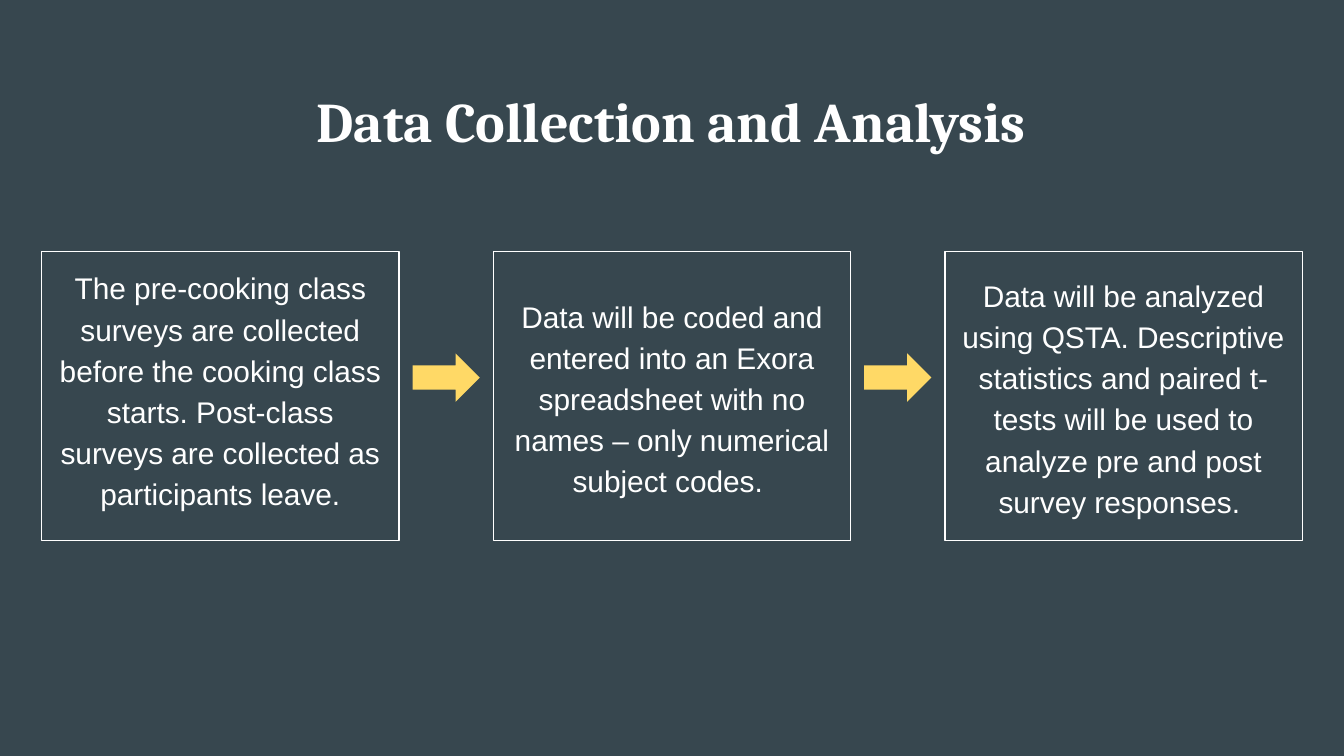
from lxml.etree import SubElement
from pptx import Presentation
from pptx.dml.color import RGBColor
from pptx.enum.shapes import MSO_SHAPE
from pptx.enum.text import MSO_ANCHOR, MSO_AUTO_SIZE, PP_ALIGN
from pptx.oxml.ns import qn
from pptx.util import Inches, Pt

COLORS = {"slate": "37474F", "white": "FFFFFF", "yellow": "FFD966"}
TITLE_FONT = {"name": "Cambria", "size": Pt(30), "bold": True}
STEP_FONT = {"name": "Arial", "size": Pt(16), "bold": False}
TITLE_PARAGRAPH = {"alignment": PP_ALIGN.CENTER}
STEP_PARAGRAPH = {
    "alignment": PP_ALIGN.CENTER,
    "line_spacing": 1.15,
    "space_before": Pt(0),
    "space_after": Pt(16),
}
STEPS = [
    ("The pre-cooking class surveys are collected before the cooking class starts. "
     "Post-class surveys are collected as participants leave.", MSO_ANCHOR.TOP),
    ("Data will be coded and entered into an Exora spreadsheet with no names "
     "– only numerical subject codes. ", MSO_ANCHOR.MIDDLE),
    ("Data will be analyzed using QSTA. Descriptive statistics and paired t-tests "
     "will be used to analyze pre and post survey responses. ", MSO_ANCHOR.MIDDLE),
]
SLIDE_WIDTH = 10
SLIDE_HEIGHT = SLIDE_WIDTH * 9 / 16
STEP_TOP, STEP_WIDTH, STEP_HEIGHT, STEP_GAP = 1.87, 2.66, 2.15, 0.7
STEP_PITCH = STEP_WIDTH + STEP_GAP
STEP_LEFT = (SLIDE_WIDTH - STEP_WIDTH) / 2 - STEP_PITCH
ARROW_TOP, ARROW_WIDTH, ARROW_HEIGHT = 2.63, 0.5, 0.36


def color(name):
    """Return the named palette colour."""
    return RGBColor.from_string(COLORS[name])


def apply_format(target, values):
    """Set each attribute in values on target."""
    for attribute, value in values.items():
        setattr(target, attribute, value)


def place(shape, left, top, width, height):
    """Position a shape by lengths in inches."""
    apply_format(shape, {
        "left": Inches(left), "top": Inches(top),
        "width": Inches(width), "height": Inches(height),
    })


def write_text(placeholder, text, anchor, paragraph_format, font_format):
    """Fill a placeholder with one formatted paragraph."""
    frame = placeholder.text_frame
    frame.text = text
    margins = {f"margin_{side}": Inches(0.1) for side in ("left", "right", "top", "bottom")}
    apply_format(frame, {
        "word_wrap": True, "auto_size": MSO_AUTO_SIZE.NONE,
        "vertical_anchor": anchor, **margins,
    })
    paragraph = frame.paragraphs[0]
    apply_format(paragraph, paragraph_format)
    font = paragraph.runs[0].font
    apply_format(font, font_format)
    font.color.rgb = color("white")
    return paragraph


def add_title(slide, text):
    """Write the slide heading in the title placeholder."""
    heading = slide.shapes.title
    place(heading, 1.07, 0.54, 7.85, 0.68)
    write_text(heading, text, MSO_ANCHOR.TOP, TITLE_PARAGRAPH, TITLE_FONT)


def add_step(placeholder, left, text, anchor):
    """Turn a body placeholder into an outlined process step."""
    place(placeholder, left, STEP_TOP, STEP_WIDTH, STEP_HEIGHT)
    placeholder.line.color.rgb = color("white")
    placeholder.line.width = Pt(0.75)
    paragraph = write_text(placeholder, text, anchor, STEP_PARAGRAPH, STEP_FONT)
    properties = paragraph._p.get_or_add_pPr()
    properties.set("marL", "0")
    properties.set("indent", "0")
    SubElement(properties, qn("a:buNone"))


def add_arrow(slide, left):
    """Draw the arrow that leads to the next step."""
    arrow = slide.shapes.add_shape(MSO_SHAPE.RIGHT_ARROW, 0, 0, 0, 0)
    place(arrow, left, ARROW_TOP, ARROW_WIDTH, ARROW_HEIGHT)
    arrow.shadow.inherit = False
    arrow.fill.solid()
    arrow.fill.fore_color.rgb = color("yellow")
    arrow.line.fill.background()


def main():
    """Build and save the data collection slide."""
    deck = Presentation()
    apply_format(deck, {
        "slide_width": Inches(SLIDE_WIDTH), "slide_height": Inches(SLIDE_HEIGHT),
    })
    comparison_layout = deck.slide_layouts[4]
    slide = deck.slides.add_slide(comparison_layout)
    slide.background.fill.solid()
    slide.background.fill.fore_color.rgb = color("slate")

    add_title(slide, "Data Collection and Analysis")
    _, *bodies = slide.placeholders
    for index, (body, (text, anchor)) in enumerate(zip(bodies, STEPS)):
        add_step(body, STEP_LEFT + index * STEP_PITCH, text, anchor)
    for unused in bodies[len(STEPS):]:
        unused.element.getparent().remove(unused.element)

    first_arrow = STEP_LEFT + STEP_WIDTH + (STEP_GAP - ARROW_WIDTH) / 2
    for index in range(len(STEPS) - 1):
        add_arrow(slide, first_arrow + index * STEP_PITCH)
    deck.save("out.pptx")


if __name__ == "__main__":
    main()
